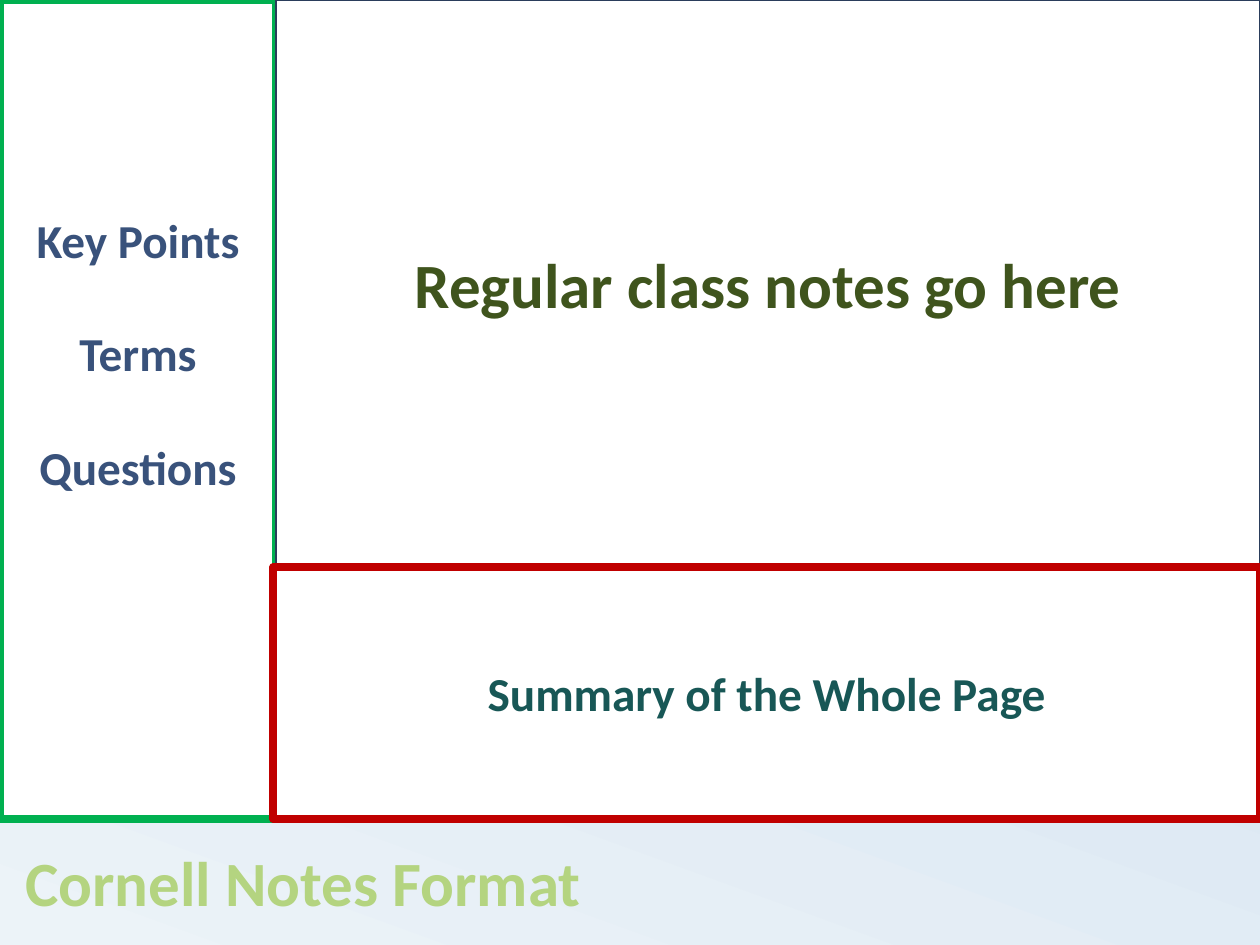
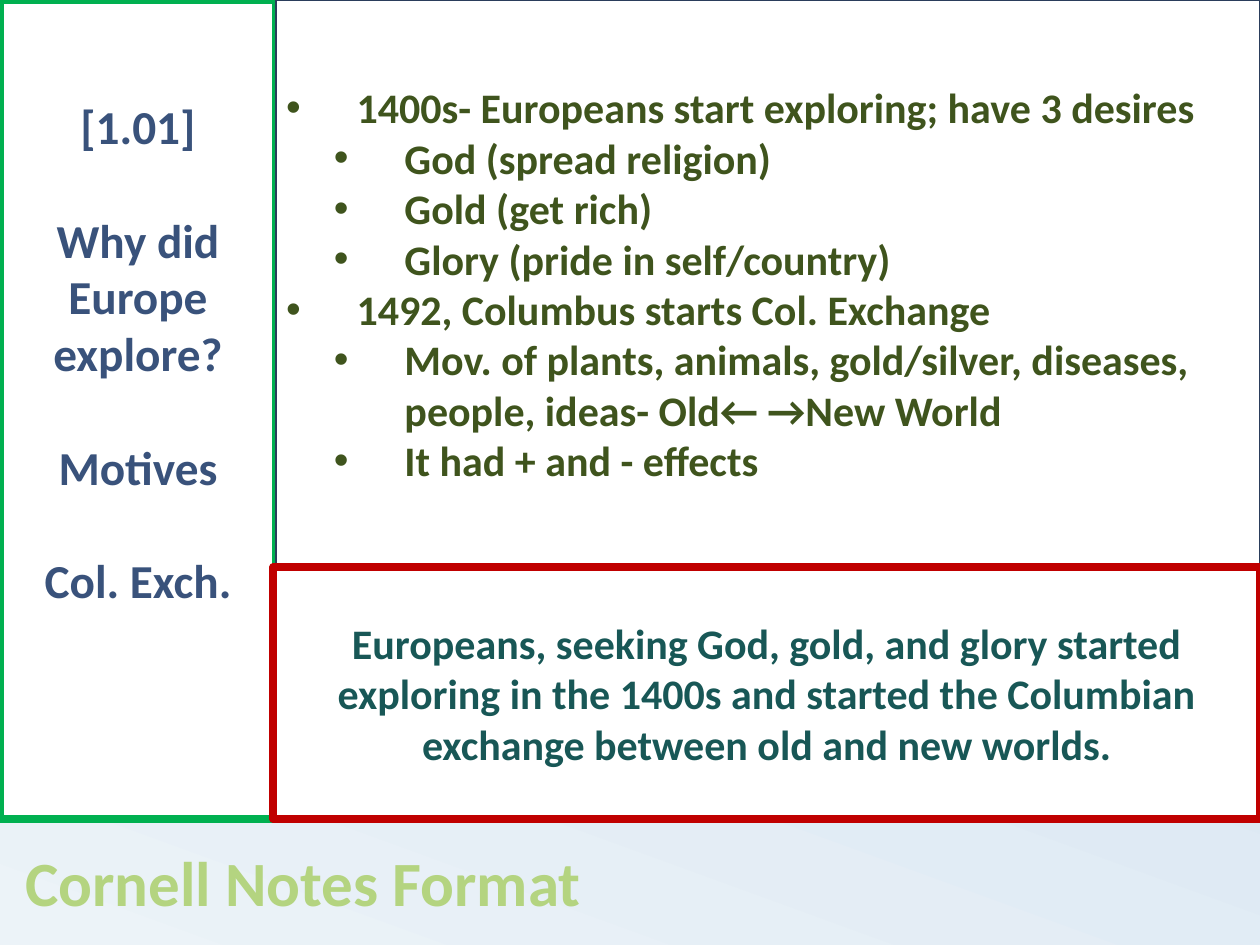
"""Build two slides that show the Cornell Notes page layout."""
from copy import deepcopy

from lxml import etree
from pptx import Presentation
from pptx.dml.color import RGBColor
from pptx.enum.shapes import MSO_SHAPE
from pptx.enum.text import MSO_ANCHOR, MSO_AUTO_SIZE, PP_ALIGN
from pptx.oxml.ns import qn
from pptx.util import Emu, Pt

RECT = MSO_SHAPE.RECTANGLE
MIDDLE, BOTTOM = MSO_ANCHOR.MIDDLE, MSO_ANCHOR.BOTTOM
LEFT, CENTER = PP_ALIGN.LEFT, PP_ALIGN.CENTER
NO_FIT = MSO_AUTO_SIZE.NONE

SCALE = 9144
WIDE, HIGH = 1000, 750
CUE_W, NOTE_H, PAGE_H = 219, 450, 650
SUM_X = 217
FONT = "Calibri"
GAP = 32.4
HANG, STEP = 56, 38

HEX = {
    "title": "B4D480", "white": "FFFFFF",
    "cue": "39527B", "cue_line": "00B050",
    "note": "3F541D", "note_line": "2A3D5B",
    "sum": "185756", "sum_line": "C00000",
}
GRAD = [(0, "ECF3F8"), (0.58, "D9E6F2"), (1, "A1C1DE")]

PAGES = [
    {
        "cues": ["Key Points", "Terms", "Questions"],
        "notes": ["Regular class notes go here"],
        "sum": "Summary of the Whole Page",
        "sum_size": 27,
    },
    {
        "cues": ["[1.01]", "Why did Europe explore?", "Motives", "Col. Exch."],
        "notes": [
            (0, "1400s- Europeans start exploring; have 3 desires"),
            (1, "God (spread religion)"),
            (1, "Gold (get rich)"),
            (1, "Glory (pride in self/country)"),
            (0, "1492, Columbus starts Col. Exchange"),
            (1, "Mov. of plants, animals, gold/silver, diseases, "
                "people, ideas- Old← →New World"),
            (1, "It had + and - effects"),
        ],
        "sum": "Europeans, seeking God, gold, and glory started exploring "
               "in the 1400s and started the Columbian exchange between "
               "old and new worlds.",
        "sum_size": 24,
    },
]


def px(n):
    """Turn px into EMU."""
    return Emu(n * SCALE)


def rgb(key):
    """Look up a named colour."""
    return RGBColor.from_string(HEX[key])


def paint_back(master):
    """Give every slide the pale blue gradient."""
    fill = master.background.fill
    fill.gradient()
    fill.gradient_angle = 70
    stops = master.element.find(".//" + qn("a:gsLst"))
    stops.append(deepcopy(stops[-1]))
    for stop, (pos, tone) in zip(fill.gradient_stops, GRAD):
        stop.position = pos
        stop.color.rgb = RGBColor.from_string(tone)


def set_frame(frame, anchor, base=4):
    """Set wrapping, anchor and insets of a text frame."""
    frame.word_wrap = True
    frame.auto_size = NO_FIT
    frame.vertical_anchor = anchor
    frame.margin_left = frame.margin_right = px(8)
    frame.margin_top, frame.margin_bottom = px(4), px(base)


def style(para, size, key, align):
    """Format a paragraph and its runs."""
    para.alignment = align
    for run in para.runs:
        font = run.font
        font.name, font.size, font.bold = FONT, Pt(size), True
        font.color.rgb = rgb(key)


def add_bullet(para, level):
    """Give a paragraph a hanging bullet."""
    para.level = level
    props = para._p.get_or_add_pPr()
    props.set("marL", str(px(HANG + STEP * level)))
    props.set("indent", str(px(-HANG)))
    etree.SubElement(props, qn("a:buFont")).set("typeface", "Arial")
    etree.SubElement(props, qn("a:buChar")).set("char", "•")


def add_title(slide, text):
    """Place the title in the foot band."""
    title = slide.shapes.title
    title.left, title.top, title.width, title.height = map(px, (12, 650, 900, 83))
    set_frame(title.text_frame, BOTTOM)
    title.text_frame.text = text
    para = title.text_frame.paragraphs[0]
    para.line_spacing = 0.8
    style(para, 36, "title", LEFT)


def add_panel(slide, area, key, weight, base=4):
    """Draw one outlined white panel and return its text frame."""
    box = slide.shapes.add_shape(RECT, *map(px, area))
    box.shadow.inherit = False
    box.fill.solid()
    box.fill.fore_color.rgb = rgb("white")
    box.line.color.rgb = rgb(key + "_line")
    box.line.width = Pt(weight)
    set_frame(box.text_frame, MIDDLE, base)
    return box.text_frame


def fill_lines(frame, lines, size, key, gap=0):
    """Write centred lines, or bullets for (level, text) pairs."""
    frame.text = "\n".join(x if isinstance(x, str) else x[1] for x in lines)
    for i, (para, line) in enumerate(zip(frame.paragraphs, lines)):
        align = CENTER
        if not isinstance(line, str):
            add_bullet(para, line[0])
            align = LEFT
        if gap and i:
            para.space_before = Pt(gap)
        style(para, size, key, align)


def add_page(deck, page):
    """Add one slide with cue, note and summary panels."""
    slide = deck.slides.add_slide(deck.slide_layouts[5])
    add_title(slide, "Cornell Notes Format")
    cues = add_panel(slide, (0, 0, CUE_W, PAGE_H), "cue", 4.5, base=94)
    fill_lines(cues, page["cues"], 27, "cue", GAP)
    notes = add_panel(slide, (CUE_W, 0, WIDE - CUE_W, NOTE_H), "note", 1)
    size = 36 if len(page["notes"]) == 1 else 24
    fill_lines(notes, page["notes"], size, "note")
    area = (SUM_X, NOTE_H, WIDE - SUM_X, PAGE_H - NOTE_H)
    total = add_panel(slide, area, "sum", 4.5)
    fill_lines(total, [page["sum"]], page["sum_size"], "sum")


def main():
    """Build and save the deck."""
    deck = Presentation()
    deck.slide_width, deck.slide_height = px(WIDE), px(HIGH)
    paint_back(deck.slide_master)
    for page in PAGES:
        add_page(deck, page)
    deck.save("out.pptx")


if __name__ == "__main__":
    main()
